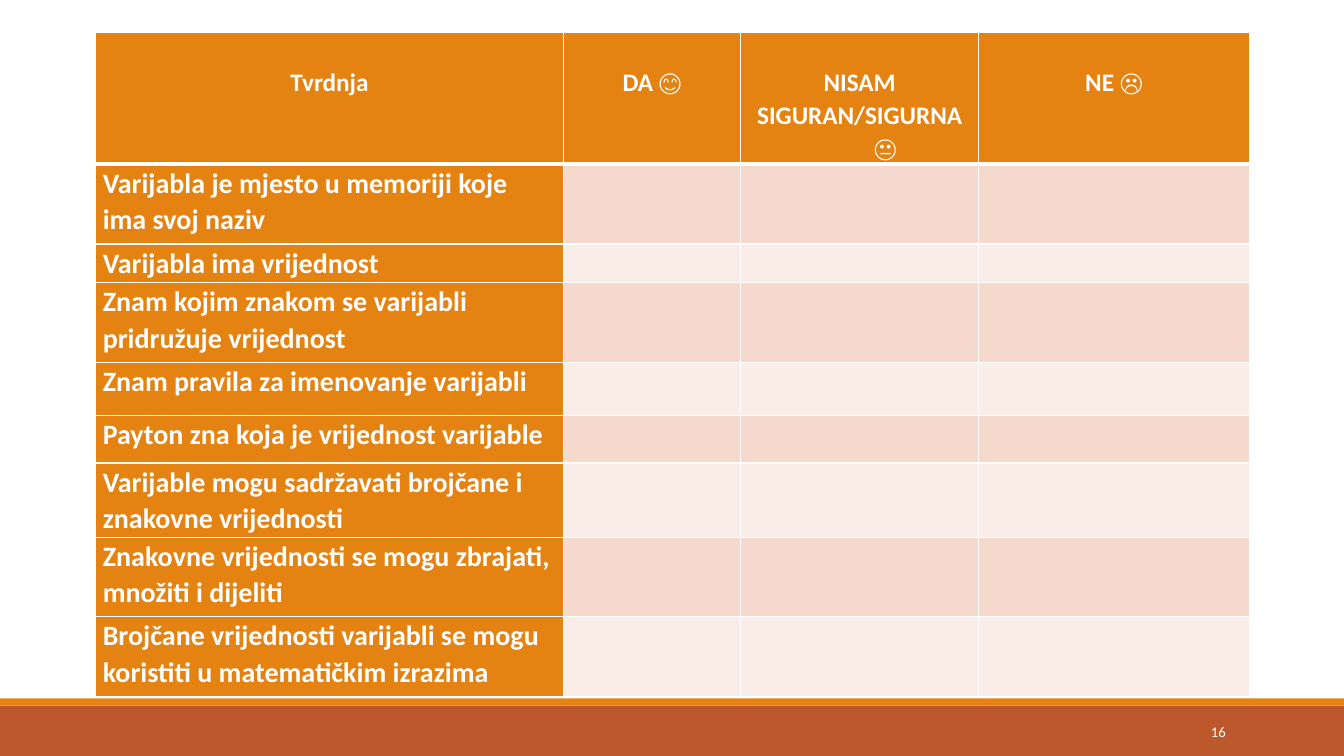
from dataclasses import dataclass

from lxml import etree
from pptx import Presentation
from pptx.dml.color import RGBColor
from pptx.enum import shapes, text
from pptx.oxml import ns
from pptx.util import Cm, Pt

WHITE, ORANGE, RUST = "FFFFFF", "E48312", "BD582C"
BAND_TINTS = ("F5D9CC", "FAEDE7")
FONT = "Calibri"
SLIDE_WIDTH, SLIDE_HEIGHT = 33.87, 19.05
CENTER, LEFT, RIGHT = text.PP_ALIGN.CENTER, text.PP_ALIGN.LEFT, text.PP_ALIGN.RIGHT


@dataclass(frozen=True)
class Answer:
    lines: tuple[str, ...]
    width: float
    last_indent: float = 0


@dataclass(frozen=True)
class Claim:
    wording: str
    height: float


@dataclass(frozen=True)
class FooterBar:
    top: float
    height: float
    color: str


HEADER_HEIGHT = 3.3
HEADINGS = (
    Answer(("Tvrdnja",), 11.79),
    Answer(("DA 😊",), 4.47),
    Answer(("NISAM SIGURAN/SIGURNA", "😐"), 5.99, last_indent=1.3),
    Answer(("NE ☹",), 6.83),
)
CLAIMS = (
    Claim("Varijabla je mjesto u memoriji koje ima svoj naziv", 2.01),
    Claim("Varijabla ima vrijednost", 0.97),
    Claim("Znam kojim znakom se varijabli pridružuje vrijednost", 2.01),
    Claim("Znam pravila za imenovanje varijabli", 1.35),
    Claim("Payton zna koja je vrijednost varijable", 1.19),
    Claim("Varijable mogu sadržavati brojčane i znakovne vrijednosti", 1.87),
    Claim("Znakovne vrijednosti se mogu zbrajati, množiti i dijeliti", 2.01),
    Claim("Brojčane vrijednosti varijabli se mogu koristiti u matematičkim izrazima", 2.01),
)
FOOTER = (FooterBar(17.78, 1.27, RUST), FooterBar(17.6, 0.18, ORANGE))


def rgb(value: str) -> RGBColor:
    return RGBColor.from_string(value)


def add_run(paragraph, wording: str, size: float, bold: bool, align) -> None:
    paragraph.alignment = align
    run = paragraph.add_run()
    run.text = wording
    run.font.name, run.font.size, run.font.bold = FONT, Pt(size), bold
    run.font.color.rgb = rgb(WHITE)


def style_cell(cell, fill: str, bottom_line: float = 1, top_line: float = 1) -> None:
    """Set margins, white borders (widths in points) and fill."""
    cell.margin_left = cell.margin_right = Cm(0.18)
    cell.margin_top = cell.margin_bottom = 0
    properties = cell._tc.get_or_add_tcPr()
    for side, width in (("L", 1), ("R", 1), ("T", top_line), ("B", bottom_line)):
        line = etree.SubElement(properties, ns.qn(f"a:ln{side}"), w=str(Pt(width)))
        solid = etree.SubElement(line, ns.qn("a:solidFill"))
        etree.SubElement(solid, ns.qn("a:srgbClr"), val=WHITE)
    cell.fill.solid()
    cell.fill.fore_color.rgb = rgb(fill)


def fill_heading(cell, answer: Answer) -> None:
    style_cell(cell, ORANGE, bottom_line=3)
    cell.margin_top = Cm(0.83)
    frame = cell.text_frame
    for index, wording in enumerate(answer.lines):
        paragraph = frame.add_paragraph() if index else frame.paragraphs[0]
        paragraph.line_spacing = 1.07
        add_run(paragraph, wording, 18, True, CENTER)
    if answer.last_indent:
        paragraph._p.get_or_add_pPr().set("marL", str(Cm(answer.last_indent)))


def add_survey(slide) -> None:
    heights = [HEADER_HEIGHT] + [claim.height for claim in CLAIMS]
    widths = [answer.width for answer in HEADINGS]
    survey = slide.shapes.add_table(
        len(heights), len(widths), Cm(2.41), Cm(0.82), Cm(sum(widths)), Cm(sum(heights))
    ).table
    for row, height in zip(survey.rows, heights):
        row.height = Cm(height)
    for column, width in zip(survey.columns, widths):
        column.width = Cm(width)
    for column, answer in enumerate(HEADINGS):
        fill_heading(survey.cell(0, column), answer)
    for row, claim in enumerate(CLAIMS, start=1):
        for column in range(len(widths)):
            fill = BAND_TINTS[(row - 1) % 2] if column else ORANGE
            style_cell(survey.cell(row, column), fill, top_line=3 if row == 1 else 1)
        paragraph = survey.cell(row, 0).text_frame.paragraphs[0]
        paragraph.line_spacing = 1.07
        add_run(paragraph, claim.wording, 20, True, LEFT)


def add_footer(slide) -> None:
    for bar in FOOTER:
        band = slide.shapes.add_shape(
            shapes.MSO_SHAPE.RECTANGLE, 0, Cm(bar.top), Cm(SLIDE_WIDTH), Cm(bar.height)
        )
        band.shadow.inherit = False
        band.fill.solid()
        band.fill.fore_color.rgb = rgb(bar.color)
        band.line.fill.background()


def add_page_number(slide) -> None:
    frame = slide.shapes.add_textbox(Cm(27.51), Cm(17.93), Cm(3.63), Cm(1.02)).text_frame
    frame.word_wrap = True
    frame.vertical_anchor = text.MSO_ANCHOR.MIDDLE
    add_run(frame.paragraphs[0], "16", 10.5, False, RIGHT)


def main() -> None:
    deck = Presentation()
    deck.slide_width, deck.slide_height = Cm(SLIDE_WIDTH), Cm(SLIDE_HEIGHT)
    slide = deck.slides.add_slide(deck.slide_layouts[6])
    add_footer(slide)
    add_survey(slide)
    add_page_number(slide)
    deck.save("out.pptx")


if __name__ == "__main__":
    main()
